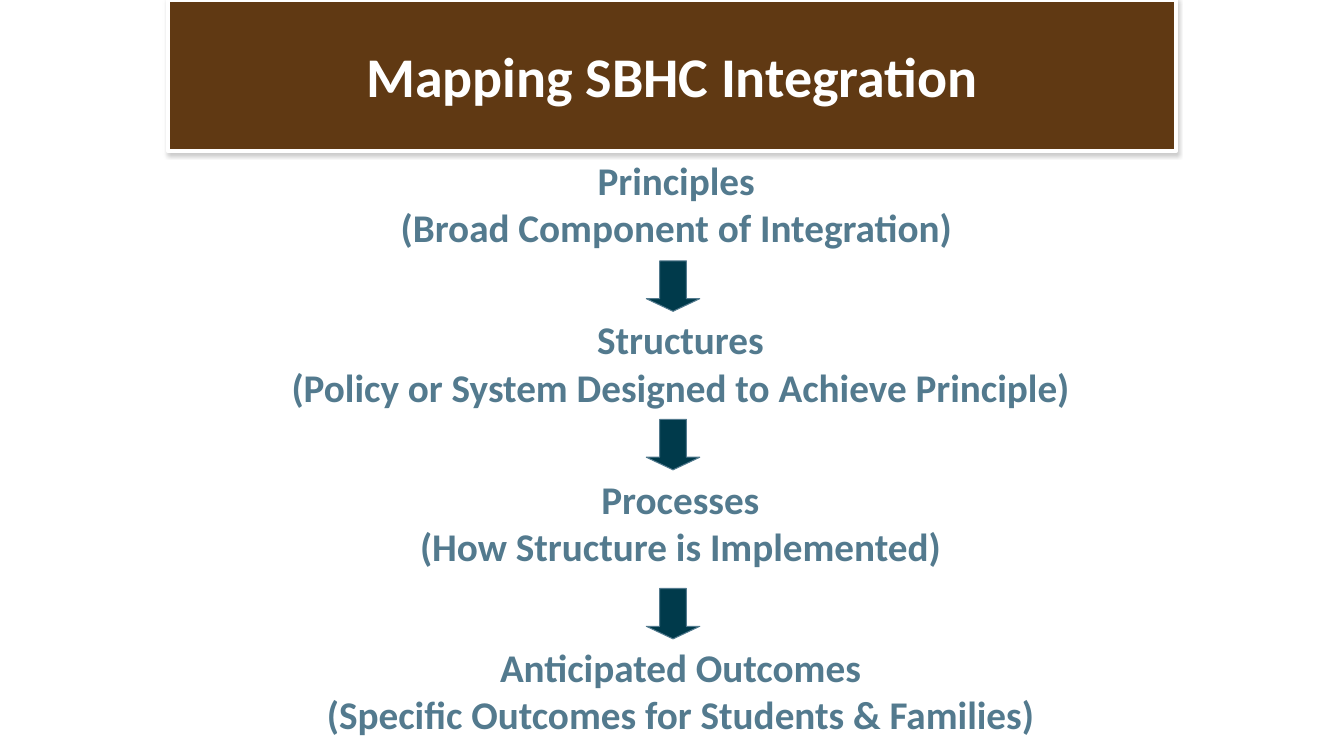
from lxml import etree
from pptx import Presentation
from pptx.dml.color import RGBColor
from pptx.enum.shapes import MSO_SHAPE
from pptx.enum.text import MSO_ANCHOR, MSO_AUTO_SIZE, PP_ALIGN
from pptx.oxml import parse_xml
from pptx.oxml.ns import nsdecls, qn
from pptx.util import Emu, Pt

PX = 9525
CENTER = PP_ALIGN.CENTER
MIDDLE = MSO_ANCHOR.MIDDLE
NO_FIT = MSO_AUTO_SIZE.NONE
GROW = MSO_AUTO_SIZE.SHAPE_TO_FIT_TEXT
RIGHT_ARROW = MSO_SHAPE.RIGHT_ARROW

BROWN = "603913"
WHITE = "FFFFFF"
STEEL = "537A8E"
NAVY = "003A4B"
GRAY = "808080"

STEP_HEIGHT = 100
STEPS = [
    (320, 144, 648, ["Principles", "(Broad Component of Integration)"]),
    (200, 296, 896, ["Structures", "(Policy or System Designed to Achieve Principle)"]),
    (256, 448, 784, ["Processes", "(How Structure is Implemented)"]),
    (200, 608, 896, ["Anticipated Outcomes", "(Specific Outcomes for Students & Families)"]),
]
ARROW_LEFT = 617
ARROW_TOPS = [247, 398, 559]


def px(*lengths):
    return [Emu(length * PX) for length in lengths]


def color(value):
    return RGBColor.from_string(value)


def paint(shape, fill, line, width):
    shape.fill.solid()
    shape.fill.fore_color.rgb = color(fill)
    shape.line.color.rgb = color(line)
    shape.line.width = Pt(width)


def write_lines(text_frame, lines, size, text_color):
    font_format = {"name": "Calibri", "size": Pt(size), "bold": True}
    text_frame.text = "\n".join(lines)
    for paragraph in text_frame.paragraphs:
        paragraph.alignment = CENTER
        font = paragraph.runs[0].font
        for attribute, value in font_format.items():
            setattr(font, attribute, value)
        font.color.rgb = color(text_color)


def add_soft_shadow(shape):
    shape.shadow.inherit = False
    effects = shape.element.spPr.find(qn("a:effectLst"))
    shadow = parse_xml(
        f'<a:outerShdw {nsdecls("a")} blurRad="{Pt(3.1)}" dist="{Pt(1.6)}" '
        f'dir="5400000" rotWithShape="0"><a:srgbClr val="{GRAY}"/></a:outerShdw>'
    )
    etree.SubElement(shadow[0], qn("a:alpha"), val="38000")
    effects.append(shadow)


def format_title(title, text):
    title.left, title.top, title.width, title.height = px(160, 0, 960, 144)
    paint(title, BROWN, WHITE, 3)
    add_soft_shadow(title)
    text_frame = title.text_frame
    frame_format = {"word_wrap": False, "auto_size": NO_FIT, "vertical_anchor": MIDDLE}
    for attribute, value in frame_format.items():
        setattr(text_frame, attribute, value)
    write_lines(text_frame, [text], 40, WHITE)


def add_step(slide, left, top, width, lines):
    text_box = slide.shapes.add_textbox(*px(left, top, width, STEP_HEIGHT))
    text_box.text_frame.word_wrap = True
    text_box.text_frame.auto_size = GROW
    write_lines(text_box.text_frame, lines, 28, STEEL)


def add_down_arrow(slide, top):
    arrow = slide.shapes.add_shape(RIGHT_ARROW, *px(ARROW_LEFT, top, 48, 51))
    arrow.rotation = 90
    arrow.adjustments[0] = 0.5
    arrow.adjustments[1] = 0.25
    paint(arrow, NAVY, STEEL, 0.75)
    arrow.shadow.inherit = False


def main():
    presentation = Presentation()
    presentation.slide_width, presentation.slide_height = px(1280, 720)
    slide = presentation.slides.add_slide(presentation.slide_layouts[5])
    format_title(slide.shapes.title, "Mapping SBHC Integration")
    for step in STEPS:
        add_step(slide, *step)
    for top in ARROW_TOPS:
        add_down_arrow(slide, top)
    presentation.save("out.pptx")


if __name__ == "__main__":
    main()
